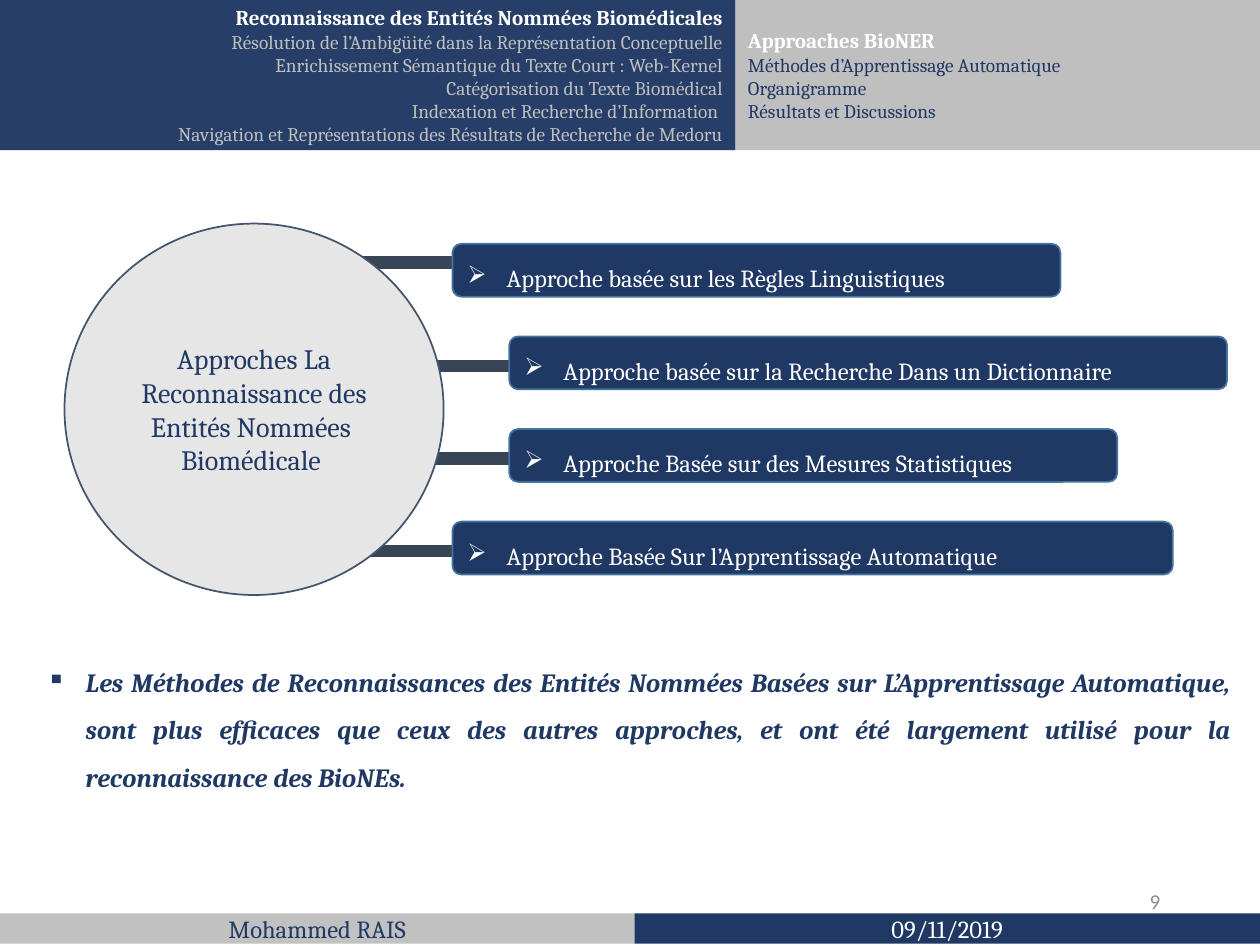
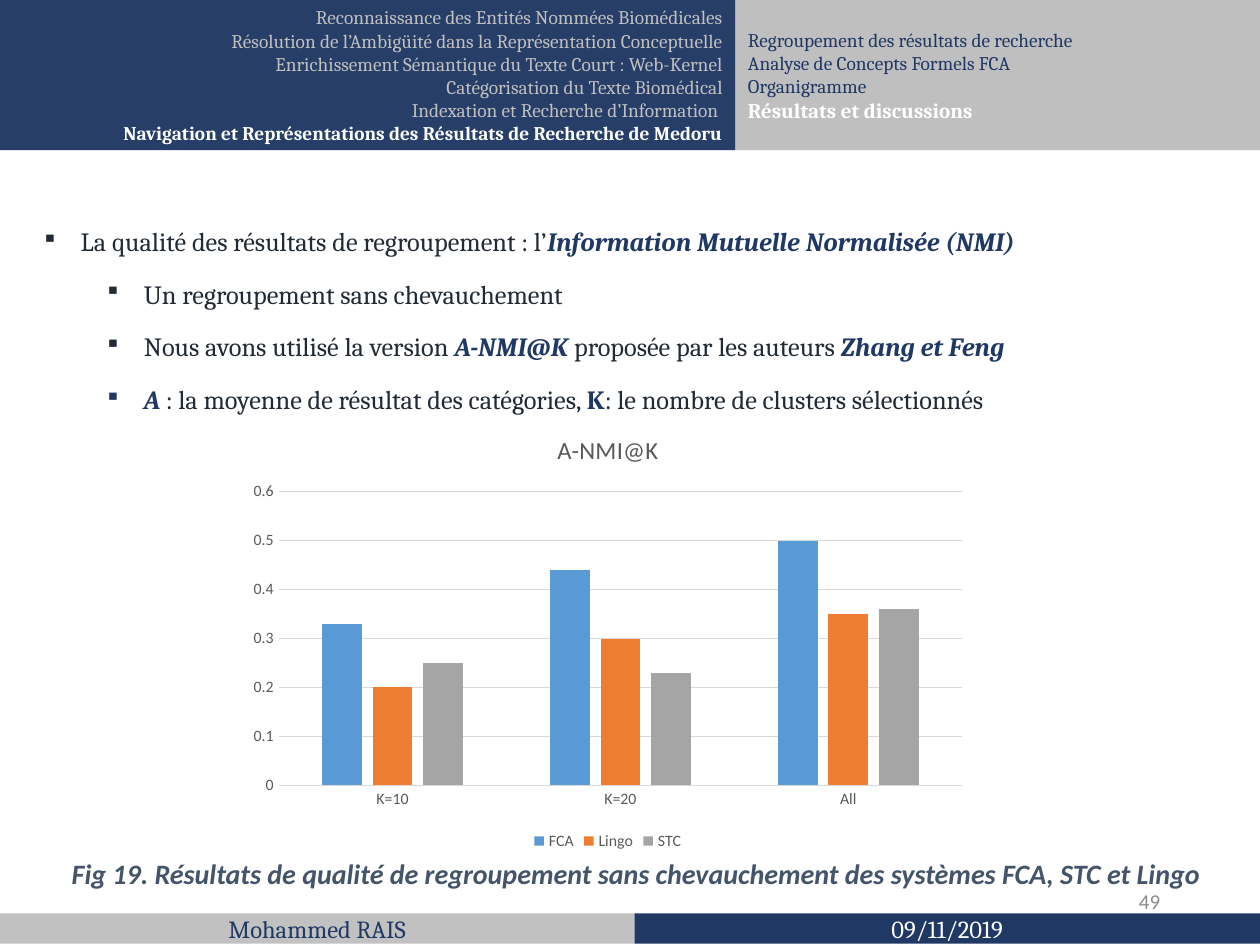
from pptx import Presentation, util as u
from pptx.chart.data import CategoryChartData
from pptx.dml.color import RGBColor
from pptx.enum import chart as ch, shapes, text
from pptx.oxml.ns import qn
from lxml import etree

NAVY = RGBColor(0x20, 0x38, 0x64)
SILVER = RGBColor(0xBF, 0xBF, 0xBF)
WHITE = RGBColor(0xFF, 0xFF, 0xFF)
PALE = RGBColor(0xE7, 0xE6, 0xE6)
SLATE = RGBColor(0x44, 0x54, 0x6A)
STEEL = RGBColor(0x43, 0x73, 0x9E)
BAR = RGBColor(0x37, 0x45, 0x57)
INK = RGBColor(0x22, 0x2A, 0x35)
PAGE = RGBColor(0x8C, 0x8C, 0x8C)
GREY = RGBColor(0x59, 0x59, 0x59)
GRID = RGBColor(0xD9, 0xD9, 0xD9)
HUES = [RGBColor(0x5B, 0x9B, 0xD5), RGBColor(0xED, 0x7D, 0x31), RGBColor(0xA5, 0xA5, 0xA5)]

SHAPE = shapes.MSO_SHAPE
ALIGN = text.PP_ALIGN
WIDE, HIGH = 9.97, 7.48
SPLIT, HALF = 58.38, 50.35
TOPICS = [
    "Reconnaissance des Entités Nommées Biomédicales",
    "Résolution de l’Ambigüité dans la Représentation Conceptuelle",
    "Enrichissement Sémantique du Texte Court : Web-Kernel",
    "Catégorisation du Texte Biomédical",
    "Indexation et Recherche d’Information ",
    "Navigation et Représentations des Résultats de Recherche de Medoru",
]


def style(font, size, color, bold=False, italic=False, face="Cambria"):
    font.name, font.size, font.color.rgb = face, u.Pt(size), color
    font.bold, font.italic = bold, italic


def write(frame, lines, align=ALIGN.LEFT, anchor=text.MSO_ANCHOR.MIDDLE, space=None,
          before=None, after=None, bullet=None, scale=100, lefts=(0.31,), **look):
    frame.word_wrap = True
    frame.vertical_anchor = anchor
    for i, line in enumerate(lines):
        para = frame.paragraphs[0] if i == 0 else frame.add_paragraph()
        para.alignment = align
        if space:
            para.line_spacing = space
        if before:
            para.space_before = u.Pt(before)
        if after:
            para.space_after = u.Pt(after)
        for words, change in [(line, {})] if isinstance(line, str) else line:
            run = para.add_run()
            run.text = words
            style(run.font, **{**look, **change})
        if bullet:
            props = para._p.get_or_add_pPr()
            props.set("marL", str(u.Inches(lefts[min(i, len(lefts) - 1)])))
            props.set("indent", str(u.Inches(-0.31)))
            etree.SubElement(props, qn("a:buSzPct")).set("val", str(scale * 1000))
            etree.SubElement(props, qn("a:buChar")).set("char", bullet)


class Deck:
    def __init__(self):
        self.show = Presentation()
        self.show.slide_width, self.show.slide_height = u.Inches(WIDE), u.Inches(HIGH)

    def place(self, x, y, w, h):
        return [u.Inches(part * side / 100) for part, side in zip((x, y, w, h), (WIDE, HIGH) * 2)]

    def shape(self, kind, box, fill, lines=(), line=None, alpha=None, **look):
        item = self.slide.shapes.add_shape(kind, *self.place(*box))
        item.shadow.inherit = False
        item.fill.solid()
        item.fill.fore_color.rgb = fill
        if alpha:
            tint = item.element.spPr.find(qn("a:solidFill")).find(qn("a:srgbClr"))
            etree.SubElement(tint, qn("a:alpha")).set("val", str(alpha * 1000))
        if line is None:
            item.line.fill.background()
        else:
            item.line.color.rgb, item.line.width = line, u.Pt(1)
        if lines:
            write(item.text_frame, lines, **look)

    def label(self, box, lines, **look):
        item = self.slide.shapes.add_textbox(*self.place(*box))
        write(item.text_frame, lines, **look)

    def header(self, x, w, lines, live, fill, color, size, **look):
        mark = dict(size=size, color=WHITE, bold=True)
        rows = [[(words, mark if i == live else {})] for i, words in enumerate(lines)]
        self.shape(SHAPE.RECTANGLE, (x, 0, w, 15.9), fill, rows, size=11, color=color, **look)

    def footer(self, x, w, words, fill, color, alpha=None):
        self.shape(SHAPE.RECTANGLE, (x, 96.66, w, 3.2), fill, [words], alpha=alpha,
                   align=ALIGN.CENTER, size=14, color=color)

    def page(self, number, topic, size, parts, part):
        self.slide = self.show.slides.add_slide(self.show.slide_layouts[6])
        self.header(SPLIT, 100 - SPLIT, parts, part, SILVER, NAVY, 12)
        self.header(0, SPLIT, TOPICS, topic, NAVY, SILVER, size, alpha=97, align=ALIGN.RIGHT)
        self.label((70.61, 92.65, 22.47, 5.35), [str(number)], align=ALIGN.RIGHT,
                   size=12, color=PAGE, face="Calibri")
        self.footer(HALF, 100 - HALF, "09/11/2019", NAVY, WHITE)
        self.footer(0, HALF, "Mohammed RAIS", SILVER, NAVY, 97)

    def chart(self, box, title, cats, rows):
        data = CategoryChartData(number_format="General")
        data.categories = cats
        for name, vals in rows.items():
            data.add_series(name, vals)
        plan = self.slide.shapes.add_chart(
            ch.XL_CHART_TYPE.COLUMN_CLUSTERED, *self.place(*box), data).chart
        style(plan.font, 9, GREY, face="Calibri")
        plan.has_title = True
        plan.chart_title.include_in_layout = False
        write(plan.chart_title.text_frame, [title], align=ALIGN.CENTER,
              size=14, color=GREY, face="Calibri")
        plan.has_legend = True
        plan.legend.position = ch.XL_LEGEND_POSITION.BOTTOM
        plan.legend.include_in_layout = False
        plot = plan.plots[0]
        plot.gap_width, plot.overlap, plot.vary_by_categories = 219, -27, False
        for row, hue in zip(plot.series, HUES):
            row.format.fill.solid()
            row.format.fill.fore_color.rgb = hue
        cat, val = plan.category_axis, plan.value_axis
        for axis in (cat, val):
            axis.major_tick_mark = axis.minor_tick_mark = ch.XL_TICK_MARK.NONE
            style(axis.tick_labels.font, 9, GREY, face="Calibri")
        val.minimum_scale, val.maximum_scale, val.major_unit = 0, 0.6, 0.1
        val.format.line.fill.background()
        for rule in (cat.format.line, val.major_gridlines.format.line):
            rule.color.rgb, rule.width = GRID, u.Pt(0.75)


def methods(deck):
    deck.page(9, 0, 12, ["Approaches BioNER", "Méthodes d’Apprentissage Automatique",
                         "Organigramme", "Résultats et Discussions"], 0)
    for x, y in [(14.24, 25.4), (20.86, 36.36), (20.86, 46.12), (19.06, 55.88)]:
        deck.shape(SHAPE.MATH_MINUS, (x, y, 26.18, 4.81), BAR, line=BAR)
    deck.shape(SHAPE.OVAL, (5.12, 23.66, 30.09, 39.3), PALE,
               ["Approches La Reconnaissance des Entités Nommées ", "Biomédicale "],
               line=SLATE, align=ALIGN.CENTER, size=16, color=NAVY)
    near, far = 35.91, 40.42
    items = [
        (near, 48.25, "Approche basée sur les Règles Linguistiques"),
        (far, 56.97, "Approche basée sur la Recherche Dans un Dictionnaire"),
        (far, 48.25, "Approche Basée sur des Mesures Statistiques"),
        (near, 57.17, "Approche Basée Sur l’Apprentissage Automatique"),
    ]
    for i, (x, w, words) in enumerate(items):
        deck.shape(SHAPE.ROUNDED_RECTANGLE, (x, 25.8 + 9.8 * i, w, 5.6), NAVY, [words],
                   line=STEEL, space=1.5, bullet="➢", size=14, color=WHITE)
    deck.label((2.71, 68.18, 95.99, 16.58), [
        "Les Méthodes de Reconnaissances des Entités Nommées Basées sur L’Apprentissage "
        "Automatique, sont plus efficaces que ceux des autres approches, et ont été "
        "largement utilisé pour la reconnaissance des BioNEs."],
        align=ALIGN.JUSTIFY, anchor=text.MSO_ANCHOR.TOP, space=1.5, bullet="▪",
        size=15, color=NAVY, bold=True, italic=True)


def results(deck):
    deck.page(49, 5, 11, ["Regroupement des résultats de recherche",
                          "Analyse de Concepts Formels FCA", "Organigramme",
                          "Résultats et discussions"], 3)
    deck.chart((18.96, 43.72, 58.58, 46.79), "A-NMI@K", ["K=10", "K=20", "All"],
               {"FCA": (0.33, 0.44, 0.5), "Lingo": (0.2, 0.3, 0.35), "STC": (0.25, 0.23, 0.36)})
    bold = dict(color=NAVY, bold=True)
    key = dict(bold, italic=True)
    deck.label((2.31, 21.52, 96.49, 23.66), [
        [("La qualité des résultats de regroupement : l’", {}),
         ("Information Mutuelle Normalisée (NMI)", key)],
        "Un regroupement sans chevauchement",
        [("Nous avons utilisé la version ", {}), ("A-NMI@K ", key),
         ("proposée par les auteurs ", {}), ("Zhang et Feng", key)],
        [("A ", key), (": la moyenne de résultat des catégories, ", {}),
         ("K", bold), (": le nombre de clusters sélectionnés", {})]],
        align=ALIGN.JUSTIFY, anchor=text.MSO_ANCHOR.TOP, space=1.5, before=3,
        bullet="▪", scale=85, lefts=(0.31, 0.81), size=15, color=INK)
    deck.label((2.31, 89.97, 96.39, 4.95), [
        "Fig 19. Résultats de qualité de regroupement sans chevauchement des systèmes "
        "FCA, STC et Lingo"], align=ALIGN.CENTER, anchor=text.MSO_ANCHOR.TOP, after=10,
        size=16, color=SLATE, bold=True, italic=True, face="Calibri")


def main():
    deck = Deck()
    methods(deck)
    results(deck)
    deck.show.save("out.pptx")


if __name__ == "__main__":
    main()
